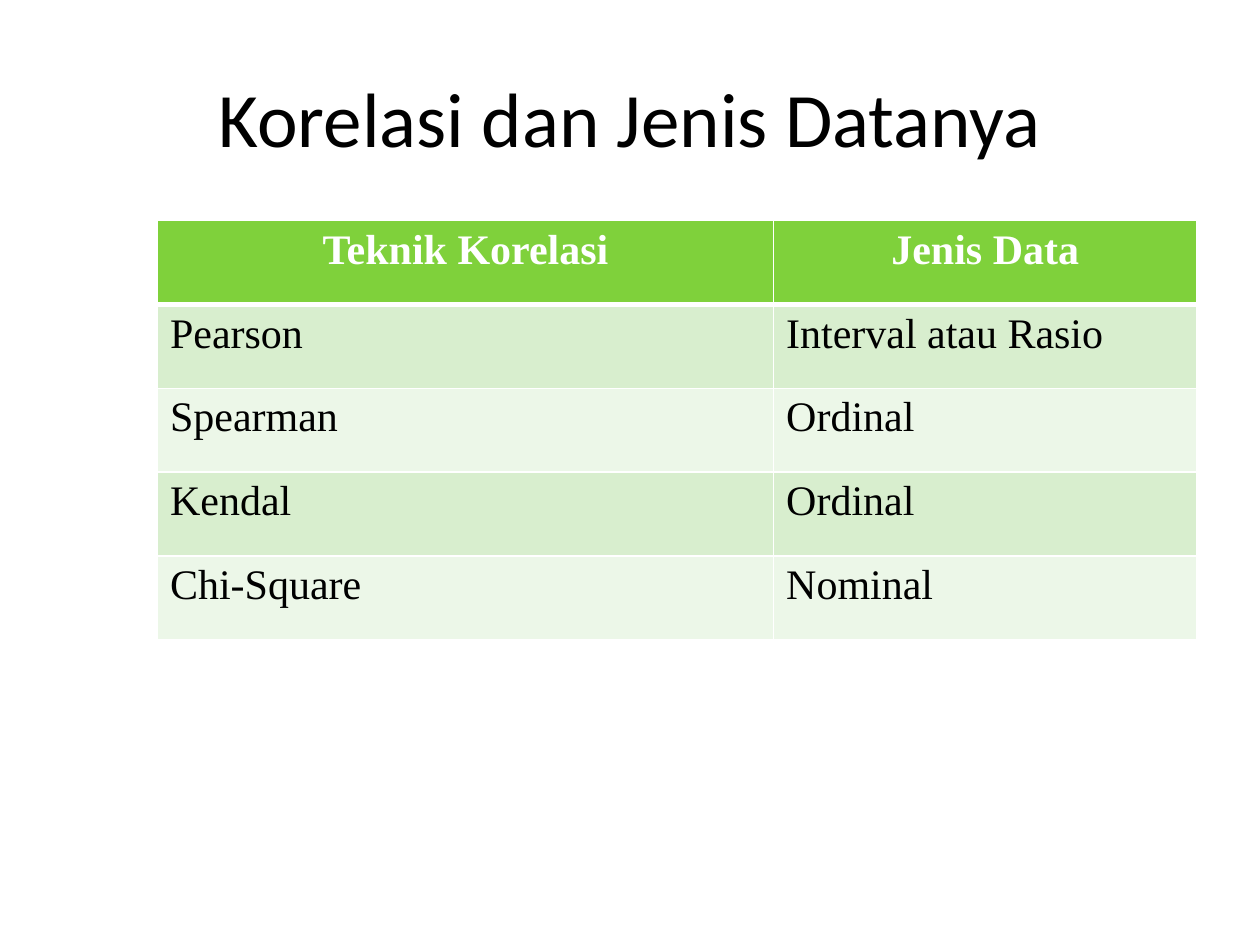
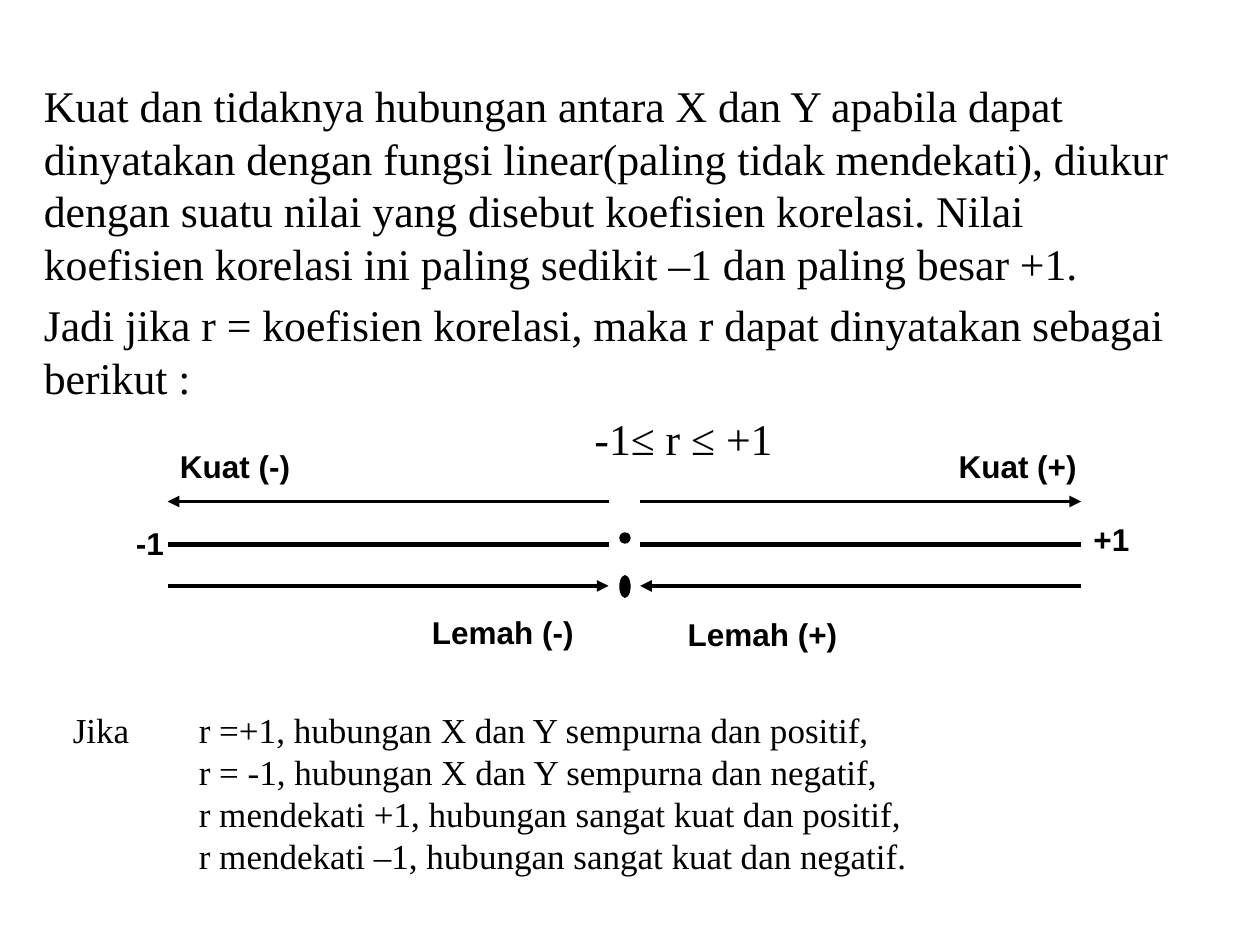
"""Builds two slides on correlation techniques and the correlation coefficient."""
from dataclasses import dataclass, field
from typing import Any

from lxml.etree import SubElement
from pptx import Presentation
from pptx.dml.color import RGBColor
from pptx.enum.shapes import MSO_CONNECTOR as Connector, MSO_SHAPE as Shape
from pptx.enum.text import MSO_ANCHOR as Anchor, PP_ALIGN as Align
from pptx.oxml import parse_xml
from pptx.oxml.ns import nsdecls, qn
from pptx.slide import Slide
from pptx.util import Emu, Pt

PX = 9144
BLACK, WHITE = "000000", "FFFFFF"
HEADER_GREEN, BANDS = "7FD13B", ("D8EECE", "ECF7E8")
TITLE = dict(name="Calibri", size=Pt(44))
HEADING = dict(name="Times New Roman", size=Pt(24), bold=True)
ENTRY = dict(HEADING, bold=False)
BODY = dict(name="Times New Roman", size=Pt(25))
CASE = dict(BODY, size=Pt(20))
LABEL = dict(name="Arial", size=Pt(18), bold=True)


@dataclass
class Line:
    text: str
    indent: int = 0
    first: int = 0
    format: dict[str, Any] = field(default_factory=dict)


@dataclass
class Box:
    left: int
    top: int
    width: int
    height: int
    lines: list[Line]
    font: dict[str, Any]
    frame: dict[str, Any] = field(default_factory=lambda: dict(word_wrap=True))


@dataclass
class Ray:
    start: int
    end: int
    y: int
    weight: float = 2.25
    arrow: bool = True


def px(length: int) -> Emu:
    return Emu(length * PX)


def colour(code: str) -> RGBColor:
    return RGBColor.from_string(code)


def apply(target: Any, values: dict[str, Any]) -> None:
    for key, value in values.items():
        setattr(target, key, value)


def write(paragraph: Any, line: Line, font: dict[str, Any], code: str = BLACK) -> None:
    properties = paragraph._p.get_or_add_pPr()
    properties.set("marL", str(px(line.indent)))
    properties.set("indent", str(px(line.first)))
    apply(paragraph, line.format)
    run = paragraph.add_run()
    run.text = line.text
    apply(run.font, font)
    run.font.color.rgb = colour(code)


def draw_box(slide: Slide, box: Box) -> None:
    area = map(px, (box.left, box.top, box.width, box.height))
    frame = slide.shapes.add_textbox(*area).text_frame
    apply(frame, box.frame)
    for index, line in enumerate(box.lines):
        paragraph = frame.add_paragraph() if index else frame.paragraphs[0]
        write(paragraph, line, box.font)


def draw_ray(slide: Slide, ray: Ray) -> None:
    ends = map(px, (ray.start, ray.y, ray.end, ray.y))
    connector = slide.shapes.add_connector(Connector.STRAIGHT, *ends)
    connector.line.width = Pt(ray.weight)
    connector.line.color.rgb = colour(BLACK)
    if ray.arrow:
        SubElement(connector.line._get_or_add_ln(), qn("a:tailEnd"), type="triangle")
    SubElement(connector._element.spPr, qn("a:effectLst"))


def draw_dot(slide: Slide, top: int, height: int) -> None:
    dot = slide.shapes.add_shape(Shape.OVAL, px(492), px(top), px(8), px(height))
    dot.shadow.inherit = False
    dot.fill.solid()
    dot.fill.fore_color.rgb = dot.line.color.rgb = colour(BLACK)
    dot.line.width = Pt(0.75)


def style_cell(cell: Any, fill: str, weights: dict[str, int]) -> None:
    cell.fill.solid()
    cell.fill.fore_color.rgb = colour(fill)
    for index, (side, weight) in enumerate(weights.items()):
        border = parse_xml(
            f'<a:ln{side} {nsdecls("a")} w="{Pt(weight)}"><a:solidFill>'
            f'<a:srgbClr val="{WHITE}"/></a:solidFill></a:ln{side}>')
        cell._tc.get_or_add_tcPr().insert(index, border)


def technique_slide(slide: Slide) -> None:
    draw_box(slide, Box(
        50, 30, 900, 125,
        [Line("Korelasi dan Jenis Datanya", format=dict(alignment=Align.CENTER))], TITLE,
        dict(word_wrap=True, vertical_anchor=Anchor.MIDDLE)))
    techniques = [
        ("Teknik Korelasi", "Jenis Data"),
        ("Pearson", "Interval atau Rasio"),
        ("Spearman", "Ordinal"),
        ("Kendal", "Ordinal"),
        ("Chi-Square", "Nominal"),
    ]
    table = slide.shapes.add_table(
        len(techniques), 2, px(125), px(175), px(825), px(333)).table
    for column, width in zip(table.columns, (489, 336)):
        column.width = px(width)
    for row, texts in enumerate(techniques):
        header = row == 0
        fill = HEADER_GREEN if header else BANDS[(row - 1) % 2]
        weights = dict(L=1, R=1, T=3 if row == 1 else 1, B=3 if header else 1)
        align = Align.CENTER if header else Align.LEFT
        for column, text in enumerate(texts):
            cell = table.cell(row, column)
            style_cell(cell, fill, weights)
            write(cell.text_frame.paragraphs[0], Line(text, format=dict(alignment=align)),
                  HEADING if header else ENTRY, WHITE if header else BLACK)


def coefficient_slide(slide: Slide) -> None:
    gap = dict(space_before=Pt(5))
    draw_box(slide, Box(25, 58, 933, 283, [
        Line("Kuat dan tidaknya hubungan antara X dan Y apabila dapat dinyatakan dengan "
             "fungsi linear(paling tidak mendekati), diukur dengan suatu nilai yang disebut "
             "koefisien korelasi. Nilai koefisien korelasi ini paling sedikit –1 dan paling "
             "besar +1."),
        Line("Jadi jika r = koefisien korelasi, maka r dapat dinyatakan sebagai berikut :",
             format=gap),
        Line("-1≤ r ≤ +1", indent=437, format=gap),
    ], BODY))

    minus_one, left_zero, right_zero, plus_one = 133, 483, 508, 858
    strong, axis, weak = 398, 432, 465
    for ray in (
        Ray(minus_one, left_zero, axis, 3, False),
        Ray(right_zero, plus_one, axis, 3, False),
        Ray(left_zero, minus_one, strong),
        Ray(right_zero, plus_one, strong),
        Ray(minus_one, left_zero, weak),
        Ray(plus_one, right_zero, weak),
    ):
        draw_ray(slide, ray)
    draw_dot(slide, 423, 8)
    draw_dot(slide, 457, 17)

    for text, left, top, width in (
        ("-1", 98, 411, 42),
        ("+1", 858, 408, 49),
        ("Kuat (-)", 133, 350, 108),
        ("Kuat (+)", 751, 350, 114),
        ("Lemah (-)", 333, 482, 133),
        ("Lemah (+)", 536, 483, 139),
    ):
        draw_box(slide, Box(left, top, width, 40, [Line(text)], LABEL, dict(word_wrap=False)))

    draw_box(slide, Box(48, 557, 746, 177, [
        Line("Jika\tr =+1, hubungan X dan Y sempurna dan positif,", 100, -100),
        Line("r = -1, hubungan X dan Y sempurna dan negatif,", 100),
        Line("r mendekati +1, hubungan sangat kuat dan positif,", 100),
        Line("r mendekati –1, hubungan sangat kuat dan negatif.", 100),
    ], CASE))


def main() -> None:
    deck = Presentation()
    deck.slide_width, deck.slide_height = px(1000), px(750)
    for build in (technique_slide, coefficient_slide):
        build(deck.slides.add_slide(deck.slide_layouts[6]))
    deck.save("out.pptx")


if __name__ == "__main__":
    main()
